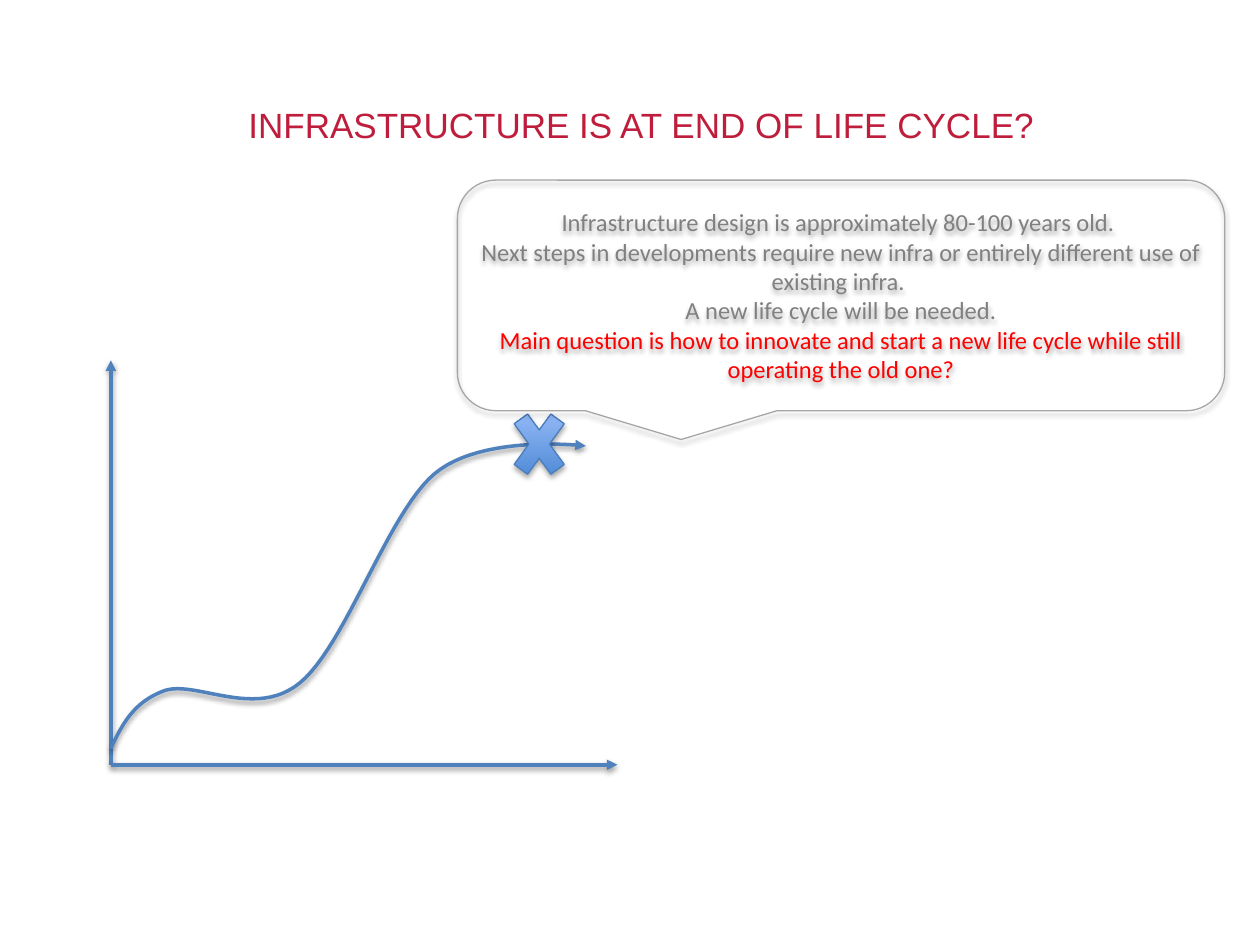
from lxml import etree
from pptx import Presentation
from pptx.dml.color import RGBColor
from pptx.enum.shapes import MSO_CONNECTOR, MSO_SHAPE
from pptx.enum.text import MSO_ANCHOR, PP_ALIGN
from pptx.oxml.ns import qn
from pptx.util import Inches, Pt

STRAIGHT = MSO_CONNECTOR.STRAIGHT
CROSS = MSO_SHAPE.MATH_MULTIPLY
CALLOUT = MSO_SHAPE.ROUNDED_RECTANGULAR_CALLOUT
MIDDLE = MSO_ANCHOR.MIDDLE
CENTER = PP_ALIGN.CENTER

CRIMSON = RGBColor(0xBF, 0x1D, 0x3C)
BLUE = RGBColor(0x4F, 0x81, 0xBD)
CROSS_EDGE = RGBColor(0x4B, 0x7E, 0xBC)
CROSS_DARK = RGBColor(0x3F, 0x80, 0xCE)
CROSS_LIGHT = RGBColor(0xA4, 0xC4, 0xFF)
EDGE_GRAY = RGBColor(0xA6, 0xA6, 0xA6)
TEXT_GRAY = RGBColor(0x80, 0x80, 0x80)
RED = RGBColor(0xFF, 0x00, 0x00)
BLACK = RGBColor(0x00, 0x00, 0x00)

TITLE = "INFRASTRUCTURE IS AT END OF LIFE CYCLE?"
MESSAGE = [
    ("Infrastructure design is approximately 80-100 years old. ", TEXT_GRAY),
    ("Next steps in developments require new infra or entirely different use "
     "of existing infra. ", TEXT_GRAY),
    ("A new life cycle will be needed.", TEXT_GRAY),
    ("Main question is how to innovate and start a new life cycle while still "
     "operating the old one?", RED),
]
CURVE_START = (0, 0.13)
CURVE = [
    [(0.09, 0.32), (0.18, 0.50), (0.43, 0.59)],
    [(0.68, 0.67), (1.15, 0.36), (1.50, 0.65)],
    [(1.86, 0.94), (2.20, 2.00), (2.57, 2.31)],
    [(2.95, 2.63), (3.77, 2.53), (3.77, 2.53)],
]
STEPS = 24


def place(shape, box):
    """Set the position and size of a shape from a box in inches."""
    shape.left, shape.top, shape.width, shape.height = map(Inches, box)


def style_line(shape, color, width, arrow=False):
    """Set an outline and optionally end it with an arrowhead."""
    shape.line.color.rgb = color
    shape.line.width = Pt(width)
    if arrow:
        ln = shape.line._get_or_add_ln()
        etree.SubElement(ln, qn("a:tailEnd"), type="triangle")


def add_shadow(shape, distance, opacity):
    """Give a finished shape a soft shadow below it."""
    effects = etree.SubElement(shape._element.spPr, qn("a:effectLst"))
    shadow = etree.SubElement(
        effects, qn("a:outerShdw"), blurRad=str(Pt(3.1)),
        dist=str(Pt(distance)), dir="5400000", rotWithShape="0")
    color = etree.SubElement(shadow, qn("a:srgbClr"), val=str(BLACK))
    etree.SubElement(color, qn("a:alpha"), val=str(opacity * 1000))


def bezier(p0, p1, p2, p3, t):
    """Return the point at t on a cubic curve."""
    u = 1 - t
    return tuple(u**3 * a + 3 * u * u * t * b + 3 * u * t * t * c + t**3 * d
                 for a, b, c, d in zip(p0, p1, p2, p3))


def add_title(s, box):
    """Fill and format the title placeholder."""
    title = s.shapes.title
    place(title, box)
    tf = title.text_frame
    tf.text = TITLE
    tf.vertical_anchor = MIDDLE
    p = tf.paragraphs[0]
    p.alignment = CENTER
    font = p.runs[0].font
    font.name, font.size, font.color.rgb = "Arial", Pt(20), CRIMSON


def add_life_cycle(s, box):
    """Draw two axes and the life cycle curve from the box's lower left."""
    left, top, width, height = box
    bottom = top + height
    for x, y in ((left, top), (left + width, bottom)):
        axis = s.shapes.add_connector(
            STRAIGHT, Inches(left), Inches(bottom), Inches(x), Inches(y))
        style_line(axis, BLUE, 2, arrow=True)
        add_shadow(axis, 1.6, 38)

    points = [CURVE_START]
    for segment in CURVE:
        start = points[-1]
        points += [bezier(start, *segment, i / STEPS)
                   for i in range(1, STEPS + 1)]
    (x0, y0), *rest = [(Inches(left + x), Inches(bottom - y))
                       for x, y in points]
    builder = s.shapes.build_freeform(x0, y0)
    builder.add_line_segments(rest, close=False)
    curve = builder.convert_to_shape()
    curve.fill.background()
    style_line(curve, BLUE, 2, arrow=True)
    add_shadow(curve, 1.6, 38)


def add_cross(s, box):
    """Mark the end of the life cycle with a cross."""
    cross = s.shapes.add_shape(CROSS, *map(Inches, box))
    cross.fill.gradient()
    cross.fill.gradient_angle = 90
    for stop, position, color in zip(
            cross.fill.gradient_stops, (0, 1), (CROSS_DARK, CROSS_LIGHT)):
        stop.position = position
        stop.color.rgb = color
    style_line(cross, CROSS_EDGE, 0.75)
    add_shadow(cross, 1.8, 35)


def add_callout(s, box):
    """Add the speech bubble with the message."""
    callout = s.shapes.add_shape(CALLOUT, *map(Inches, box))
    callout.fill.background()
    style_line(callout, EDGE_GRAY, 0.75)
    add_shadow(callout, 1.8, 35)
    tf = callout.text_frame
    tf.word_wrap = True
    tf.vertical_anchor = MIDDLE
    tf.text = "\n".join(text for text, _ in MESSAGE)
    for p, (_, color) in zip(tf.paragraphs, MESSAGE):
        p.alignment = CENTER
        font = p.runs[0].font
        font.name, font.size, font.color.rgb = "Calibri", Pt(14), color


def main():
    """Build the slide and save it."""
    prs = Presentation()
    prs.slide_width, prs.slide_height = Inches(10), Inches(7.5)
    s = prs.slides.add_slide(prs.slide_layouts[5])
    add_title(s, (0.59, 0.65, 9, 0.68))
    add_life_cycle(s, (0.88, 2.86, 4.02, 3.21))
    add_cross(s, (4, 3.14, 0.56, 0.77))
    add_callout(s, (3.63, 1.43, 6.09, 1.83))
    prs.save("out.pptx")


if __name__ == "__main__":
    main()
